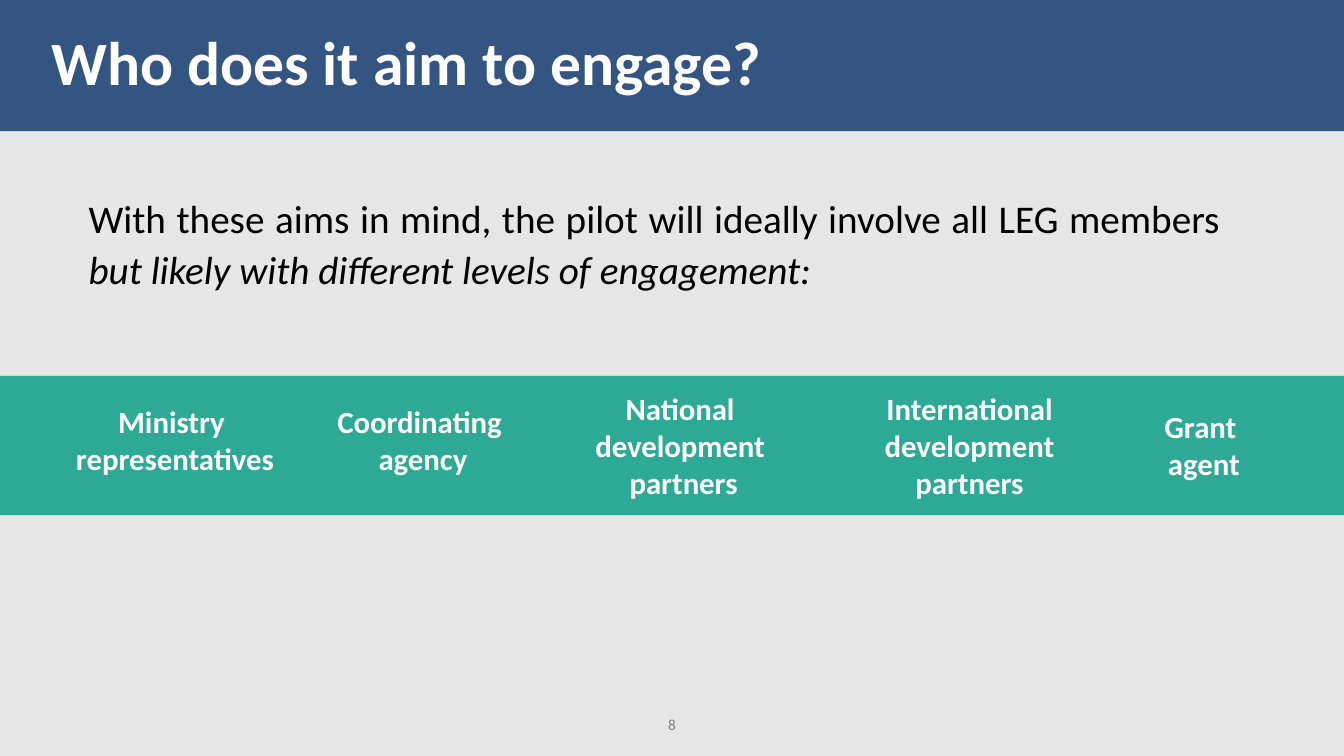
from pptx import Presentation
from pptx.dml.color import RGBColor
from pptx.enum.shapes import MSO_SHAPE
from pptx.enum.text import MSO_ANCHOR, MSO_AUTO_SIZE, PP_ALIGN
from pptx.util import Inches, Pt

RECT = MSO_SHAPE.RECTANGLE
MIDDLE, NO_FIT = MSO_ANCHOR.MIDDLE, MSO_AUTO_SIZE.NONE
LEFT, CENTER, JUSTIFY = PP_ALIGN.LEFT, PP_ALIGN.CENTER, PP_ALIGN.JUSTIFY

# Content
TITLE = "Who does it aim to engage?"
INTRO = [
    ("With these aims in mind, the pilot will ideally involve all LEG members ", False),
    ("but likely with different levels of engagement:", True),
]
PAGE = "8"
# Lines of each group, with left, top and width of its label
GROUPS = [
    (["Ministry ", "representatives"], 0.18, 3.95, 3.11),
    (["Coordinating ", "agency"], 2.64, 3.95, 3.11),
    (["National ", "development ", "partners"], 5.56, 3.82, 2.44),
    (["International ", "development ", "partners"], 8.67, 3.82, 1.89),
    (["Grant ", "agent"], 10.9, 4, 2.08),
]
COLORS = {"back": "E7E6E6", "header": "345482", "band": "2CAA96",
          "light": "FFFFFF", "dark": "000000", "page": "808080"}
FONT = "Calibri"
WIDTH, HEIGHT = 13.33, 7.5
LINE_HEIGHT, PADDING = 0.37, 0.1


def rgb(name):
    return RGBColor.from_string(COLORS[name])


def write(tf, paragraphs, *, size, color, bold=False, align=LEFT,
          line_spacing=None, space_after=None):
    """Each paragraph is a list of (text, italic) runs."""
    tf.word_wrap = True
    for i, runs in enumerate(paragraphs):
        p = tf.paragraphs[0] if i == 0 else tf.add_paragraph()
        p.alignment = align
        if line_spacing:
            p.line_spacing = line_spacing
        if space_after:
            p.space_after = Pt(space_after)
        for text, italic in runs:
            r = p.add_run()
            r.text = text
            r.font.name, r.font.size = FONT, Pt(size)
            r.font.bold, r.font.italic = bold, italic
            r.font.color.rgb = rgb(color)


def add_text(slide, box, paragraphs, **style):
    sp = slide.shapes.add_textbox(*map(Inches, box))
    write(sp.text_frame, paragraphs, **style)


prs = Presentation()
prs.slide_width, prs.slide_height = Inches(WIDTH), Inches(HEIGHT)
s = prs.slides.add_slide(prs.slide_layouts[5])
s.background.fill.solid()
s.background.fill.fore_color.rgb = rgb("back")

# Title bar
title = s.shapes.title
title.left, title.top = Inches(0), Inches(0)
title.width, title.height = Inches(WIDTH), Inches(1.3)
title.fill.solid()
title.fill.fore_color.rgb = rgb("header")
tf = title.text_frame
tf.auto_size, tf.vertical_anchor = NO_FIT, MIDDLE
tf.margin_left = Inches(0.51)
write(tf, [[(TITLE, False)]], size=44, color="light", bold=True, line_spacing=0.9)

# Introduction
add_text(s, (0.78, 1.85, 11.42, 1.09), [INTRO], size=28, color="dark",
         align=JUSTIFY, line_spacing=1.07, space_after=8)

# Band with the groups
band = s.shapes.add_shape(RECT, Inches(0), Inches(3.73), Inches(WIDTH), Inches(1.38))
band.shadow.inherit = False
band.fill.solid()
band.fill.fore_color.rgb = rgb("band")
band.line.fill.background()
for lines, left, top, width in GROUPS:
    height = len(lines) * LINE_HEIGHT + PADDING
    add_text(s, (left, top, width, height), [[(line, False)] for line in lines],
             size=22, color="light", bold=True, align=CENTER)

# Page number
add_text(s, (6.39, 7.05, 0.55, 0.29), [[(PAGE, False)]], size=11, color="page",
         align=CENTER)

prs.save("out.pptx")
